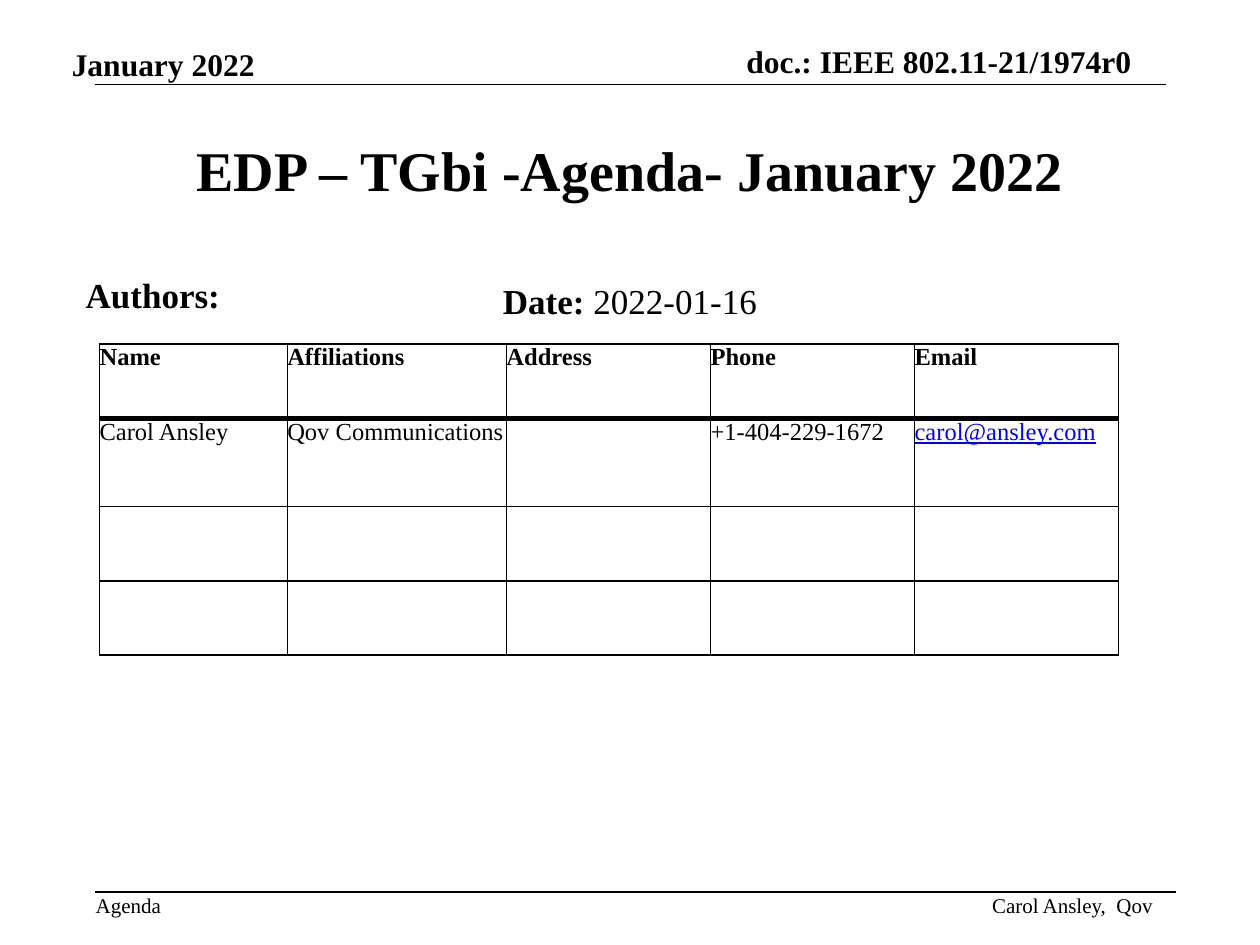
from dataclasses import dataclass

from pptx import Presentation
from pptx.dml.color import RGBColor as Rgb
from pptx.enum.shapes import MSO_CONNECTOR as Link
from pptx.enum.text import MSO_ANCHOR as Anchor, PP_ALIGN as Align
from pptx.oxml.ns import qn
from pptx.util import Inches, Pt
from lxml.etree import SubElement as Sub, Element


@dataclass(frozen=True)
class Theme:
    font: str = "Times New Roman"
    ink: str = "000000"
    link: str = "0000FF"
    title: int = 32
    lead: int = 20
    head: int = 18
    cell: int = 14
    foot: int = 12
    thin: float = 0.96
    thick: float = 3
    rule: float = 0.99


THEME = Theme()
COLS = (1.49, 1.74, 1.62, 1.62, 1.62)
ROWS = (0.59, 0.7, 0.59, 0.59)
CELLS = (
    ("Name", "Affiliations", "Address", "Phone", "Email"),
    ("Carol Ansley", "Qov Communications", "", "+1-404-229-1672", "carol@ansley.com"),
    ("",) * 5,
    ("",) * 5,
)


def style(run, size, bold=False, color=THEME.ink):
    font = run.font
    font.name, font.size, font.bold = THEME.font, Pt(size), bold
    font.color.rgb = Rgb.from_string(color)


def add_text(slide, box, parts, size, align=Align.LEFT, anchor=Anchor.TOP,
             inset=0, wrap=False, hang=0):
    frame = slide.shapes.add_textbox(*map(Inches, box)).text_frame
    frame.word_wrap = wrap
    frame.vertical_anchor = anchor
    frame.margin_left = frame.margin_right = Inches(inset)
    frame.margin_top = frame.margin_bottom = Inches(inset)
    par = frame.paragraphs[0]
    par.alignment = align
    if hang:
        par.space_before = Pt(4)
        props = par._p.get_or_add_pPr()
        props.set("marL", str(Inches(hang)))
        props.set("indent", str(-Inches(hang)))
    for text, bold in parts:
        run = par.add_run()
        run.text = text
        style(run, size, bold)


def add_rule(slide, left, right, top):
    ends = map(Inches, (left, top, right, top))
    line = slide.shapes.add_connector(Link.STRAIGHT, *ends)
    line.line.color.rgb = Rgb.from_string(THEME.ink)
    line.line.width = Pt(THEME.rule)
    Sub(line._element.spPr, qn("a:effectLst"))


def add_edge(props, spot, side, width):
    edge = Element(qn("a:ln" + side), w=str(Pt(width)))
    fill = Sub(edge, qn("a:solidFill"))
    Sub(fill, qn("a:srgbClr"), val=THEME.ink)
    props.insert(spot, edge)


def fill_cell(cell, text, row):
    cell.fill.background()
    cell.margin_left = cell.margin_right = 0
    cell.margin_top = cell.margin_bottom = 0
    cell.text_frame.text = text
    par = cell.text_frame.paragraphs[0]
    par.font.size = Pt(THEME.cell)
    for run in par.runs:
        mail = "@" in text
        style(run, THEME.cell, row == 0, THEME.link if mail else THEME.ink)
        run.font.underline = mail
    heavy = {(0, "B"), (1, "T")}
    props = cell._tc.get_or_add_tcPr()
    for spot, side in enumerate("LRTB"):
        width = THEME.thick if (row, side) in heavy else THEME.thin
        add_edge(props, spot, side, width)


def add_grid(slide, left, top):
    size = map(Inches, (left, top, sum(COLS), sum(ROWS)))
    table = slide.shapes.add_table(len(ROWS), len(COLS), *size).table
    table.first_row = table.horz_banding = False
    for col, width in zip(table.columns, COLS):
        col.width = Inches(width)
    for row, high in enumerate(ROWS):
        table.rows[row].height = Inches(high)
        for col, text in enumerate(CELLS[row]):
            fill_cell(table.cell(row, col), text, row)


def add_frame(slide):
    add_text(slide, (0.57, 0.36, 1.46, 0.3), [("January 2022", True)],
             THEME.head, anchor=Anchor.BOTTOM)
    add_text(slide, (5.88, 0.33, 3.1, 0.3), [("doc.: IEEE 802.11-21/1974r0", True)],
             THEME.head, Align.RIGHT, Anchor.BOTTOM)
    add_rule(slide, 0.75, 9.25, 0.67)
    add_rule(slide, 0.75, 9.33, 7.08)
    add_text(slide, (0.76, 7.08, 0.53, 0.2), [("Agenda", False)], THEME.foot)
    add_text(slide, (7.85, 7.08, 1.3, 0.2), [("Carol Ansley,  Qov", False)],
             THEME.foot, Align.RIGHT, Anchor.BOTTOM)


def main():
    deck = Presentation()
    deck.slide_width, deck.slide_height = Inches(10), Inches(7.5)
    slide = deck.slides.add_slide(deck.slide_layouts[6])
    add_frame(slide)
    add_text(slide, (0.75, 1.02, 8.5, 0.64),
             [("EDP – TGbi -Agenda- January 2022", True)],
             THEME.title, Align.CENTER, Anchor.MIDDLE, 0.05, True)
    add_text(slide, (0.75, 2.17, 8.5, 0.44), [("Date: ", True), ("2022-01-16", False)],
             THEME.lead, Align.CENTER, inset=0.05, wrap=True, hang=0.37)
    add_text(slide, (0.63, 2.12, 1.48, 0.41), [("Authors:", True)],
             THEME.lead, inset=0.05, wrap=True, hang=0.37)
    add_grid(slide, 0.79, 2.73)
    deck.save("out.pptx")


main()
